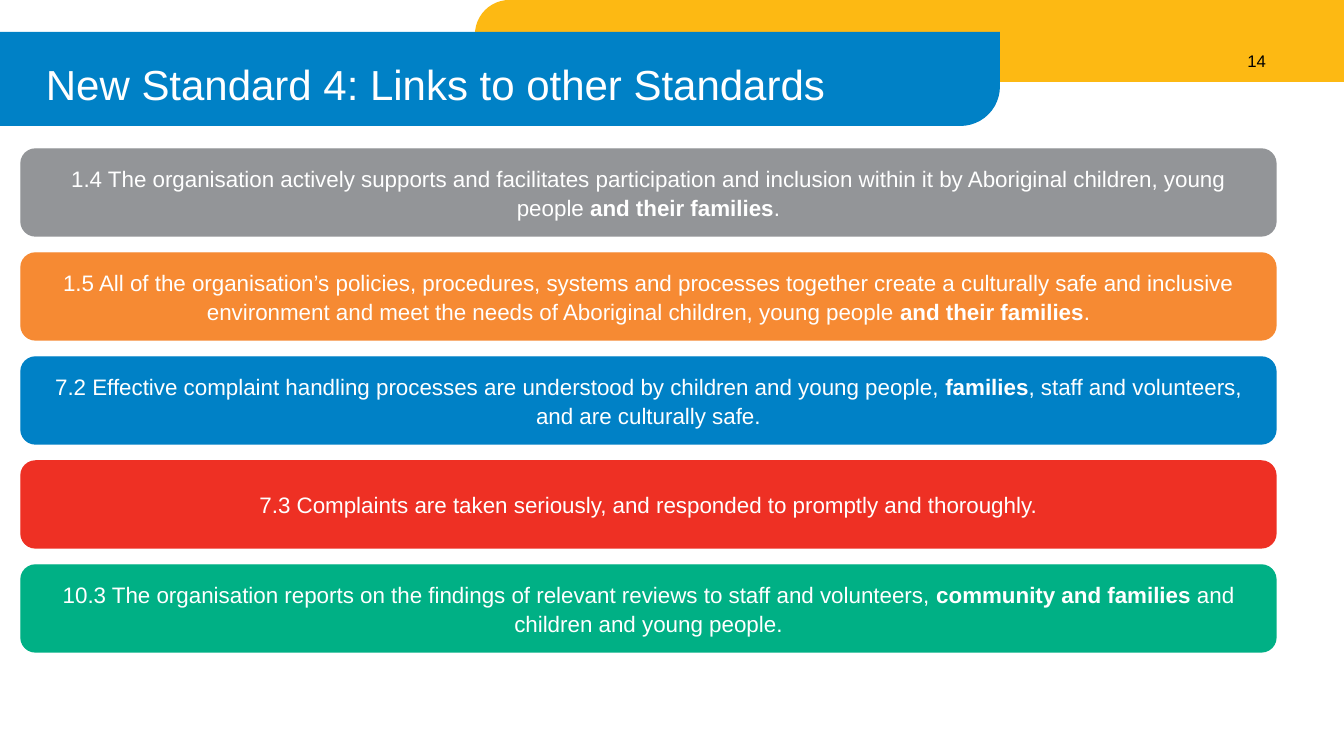
from typing import NamedTuple

from pptx import Presentation
from pptx.dml.color import RGBColor
from pptx.enum.shapes import MSO_SHAPE
from pptx.enum.text import MSO_ANCHOR, PP_ALIGN
from pptx.shapes.autoshape import Shape
from pptx.slide import Slide
from pptx.text.text import Font
from pptx.util import Emu, Pt

ROUND_RECT = MSO_SHAPE.ROUNDED_RECTANGLE
ROUND_ONE = MSO_SHAPE.ROUND_1_RECTANGLE
MIDDLE = MSO_ANCHOR.MIDDLE
LEFT, CENTER, RIGHT = PP_ALIGN.LEFT, PP_ALIGN.CENTER, PP_ALIGN.RIGHT

WHITE = RGBColor(0xFF, 0xFF, 0xFF)
BLACK = RGBColor(0x00, 0x00, 0x00)
YELLOW = RGBColor(0xFD, 0xB9, 0x13)
BLUE = RGBColor(0x00, 0x81, 0xC6)
GREY = RGBColor(0x93, 0x95, 0x98)
ORANGE = RGBColor(0xF6, 0x8A, 0x33)
RED = RGBColor(0xEE, 0x30, 0x24)
GREEN = RGBColor(0x00, 0xB0, 0x85)

EMU_PER_PX = 914400 / 100.8
FONT_NAME = "Arial"
BAR_LEFT, BAR_TOP, BAR_WIDTH, BAR_HEIGHT, BAR_PITCH = 21, 149, 1255, 87, 104


class Box(NamedTuple):
    left: int
    top: int
    width: int
    height: int


class Band(NamedTuple):
    box: Box
    color: RGBColor
    flip: str


class Label(NamedTuple):
    text: str
    box: Box
    size: int
    color: RGBColor
    align: PP_ALIGN
    line_spacing: float
    inset_top: int


class Standard(NamedTuple):
    color: RGBColor
    before: str
    emphasis: str = ""
    after: str = ""
    line_spacing: float = 1.07
    space_after: int = 8


BANDS = [
    Band(Box(475, 0, 869, 82), YELLOW, "flipH"),
    Band(Box(0, 32, 1000, 94), BLUE, "flipV"),
]
LABELS = [
    Label("New Standard 4: Links to other Standards", Box(36, 32, 964, 110),
          30, WHITE, LEFT, 0.9, 5),
    Label("14", Box(1143, 0, 133, 127), 12, BLACK, RIGHT, 1.0, 0),
]
STANDARDS = [
    Standard(GREY,
             "1.4 The organisation actively supports and facilitates participation and "
             "inclusion within it by Aboriginal children, young people ",
             "and their families", "."),
    Standard(ORANGE,
             "1.5 All of the organisation’s policies, procedures, systems and processes "
             "together create a culturally safe and inclusive environment and meet the "
             "needs of Aboriginal children, young people ",
             "and their families", "."),
    Standard(BLUE,
             "7.2 Effective complaint handling processes are understood by children and "
             "young people, ",
             "families", ", staff and volunteers, and are culturally safe."),
    Standard(RED,
             "7.3 Complaints are taken seriously, and responded to promptly and thoroughly.",
             line_spacing=1.0, space_after=0),
    Standard(GREEN,
             "10.3 The organisation reports on the findings of relevant reviews to staff "
             "and volunteers, ",
             "community and families ", "and children and young people."),
]


def px(length: int) -> Emu:
    return Emu(round(length * EMU_PER_PX))


def scaled(box: Box) -> list[Emu]:
    return [px(length) for length in box]


def style_font(font: Font, size: int, color: RGBColor) -> None:
    font.name = FONT_NAME
    font.size = Pt(size)
    font.color.rgb = color


def add_filled(slide: Slide, preset: MSO_SHAPE, box: Box, color: RGBColor) -> Shape:
    shape = slide.shapes.add_shape(preset, *scaled(box))
    shape.shadow.inherit = False
    shape.fill.solid()
    shape.fill.fore_color.rgb = color
    return shape


def add_band(slide: Slide, band: Band) -> None:
    """Draw a header band, flipped so its one round corner lies as wanted."""
    shape = add_filled(slide, ROUND_ONE, band.box, band.color)
    shape.line.fill.background()
    shape.adjustments[0] = 0.42
    shape.element.spPr.get_or_add_xfrm().set(band.flip, "1")


def add_label(slide: Slide, label: Label) -> None:
    frame = slide.shapes.add_textbox(*scaled(label.box)).text_frame
    frame.word_wrap = True
    frame.vertical_anchor = MIDDLE
    frame.margin_top = px(label.inset_top)
    frame.text = label.text
    paragraph = frame.paragraphs[0]
    paragraph.alignment = label.align
    paragraph.line_spacing = label.line_spacing
    style_font(paragraph.runs[0].font, label.size, label.color)


def add_standard(slide: Slide, row: int, standard: Standard) -> None:
    box = Box(BAR_LEFT, BAR_TOP + row * BAR_PITCH, BAR_WIDTH, BAR_HEIGHT)
    bar = add_filled(slide, ROUND_RECT, box, standard.color)
    bar.line.color.rgb = standard.color
    bar.line.width = Pt(1)
    frame = bar.text_frame
    frame.word_wrap = True
    frame.vertical_anchor = MIDDLE
    paragraph = frame.paragraphs[0]
    paragraph.alignment = CENTER
    paragraph.line_spacing = standard.line_spacing
    paragraph.space_after = Pt(standard.space_after)
    for text in filter(None, (standard.before, standard.emphasis, standard.after)):
        run = paragraph.add_run()
        run.text = text
        style_font(run.font, 16, WHITE)
        run.font.bold = text == standard.emphasis


def main() -> None:
    presentation = Presentation()
    presentation.slide_width = px(1344)
    presentation.slide_height = px(756)
    slide = presentation.slides.add_slide(presentation.slide_layouts[6])
    for band in BANDS:
        add_band(slide, band)
    for label in LABELS:
        add_label(slide, label)
    for row, standard in enumerate(STANDARDS):
        add_standard(slide, row, standard)
    presentation.save("out.pptx")


if __name__ == "__main__":
    main()
